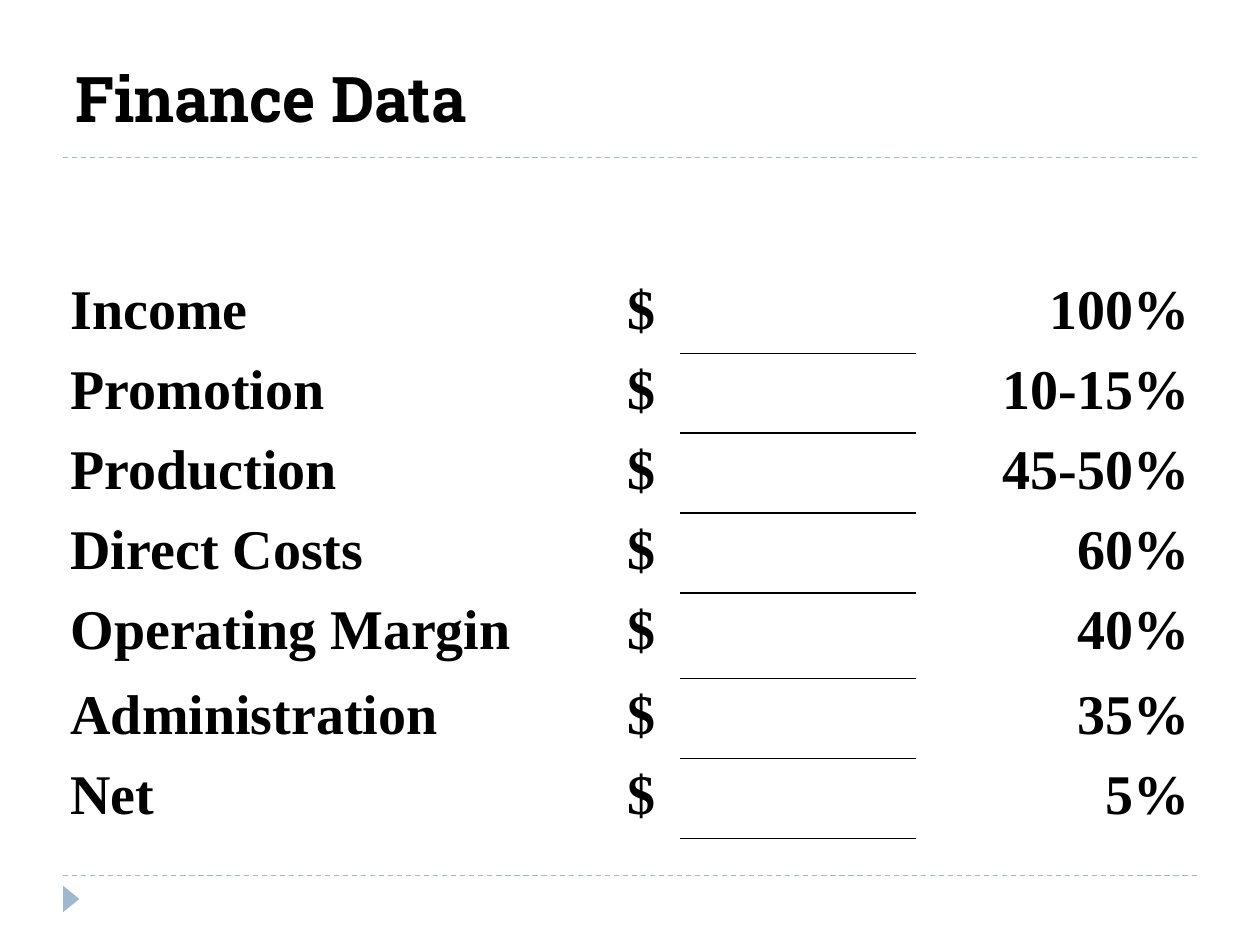
from lxml.etree import SubElement
from pptx import Presentation
from pptx.dml.color import RGBColor as RGB
from pptx.enum.dml import MSO_LINE
from pptx.enum.shapes import MSO_CONNECTOR as CONN, MSO_SHAPE as SHAPE
from pptx.enum.text import MSO_ANCHOR as ANCHOR, PP_ALIGN as ALIGN
from pptx.oxml import parse_xml
from pptx.oxml.ns import nsdecls, qn
from pptx.util import Inches, Pt

TITLE = "Finance Data"
BUDGET = [
    ("Income", "100%"),
    ("Promotion", "10-15%"),
    ("Production", "45-50%"),
    ("Direct Costs", "60%"),
    ("Operating Margin", "40%"),
    ("Administration", "35%"),
    ("Net", "5%"),
]
COL_WIDTHS = [4.32, 0.62, 1.87, 2.27]
COL_ALIGNS = [ALIGN.LEFT, ALIGN.CENTER, ALIGN.LEFT, ALIGN.RIGHT]
AMOUNT_COL = 2
ROW_HEIGHT, TALL_ROW_HEIGHT, TALL_ROW = 0.63, 0.68, "Operating Margin"
RULE_YS = [6.95, 1.25]

THEME = {
    "accent": RGB(0x9F, 0xB8, 0xCD),
    "title": {"name": "Roboto Slab", "size": Pt(36), "bold": True, "color": RGB(0, 0, 0)},
    "body": {"name": "Times New Roman", "size": Pt(32), "bold": True, "color": RGB(0, 0, 0)},
    "border": "000000",
    "plain_table": "{2D5ABB26-0587-4C30-8999-92F81FD0307C}",
}


def write(tf, text, style, align=ALIGN.LEFT):
    p = tf.paragraphs[0]
    p.alignment = align
    r = p.add_run()
    r.text = text
    for key, value in style.items():
        if key == "color":
            r.font.color.rgb = value
        else:
            setattr(r.font, key, value)


def add_rule(slide, y):
    line = slide.shapes.add_connector(CONN.STRAIGHT, Inches(0.5), Inches(y), Inches(9.5), Inches(y))
    line.line.color.rgb = THEME["accent"]
    line.line.width = Pt(0.75)
    line.line.dash_style = MSO_LINE.DASH
    SubElement(line._element.spPr, qn("a:effectLst"))


def add_marker(slide):
    sp = slide.shapes.add_shape(SHAPE.ISOSCELES_TRIANGLE, Inches(0.46), Inches(7.07), Inches(0.21), Inches(0.13))
    sp.rotation = 90
    sp.shadow.inherit = False
    sp.fill.solid()
    sp.fill.fore_color.rgb = THEME["accent"]
    sp.line.fill.background()


def add_title(slide):
    tf = slide.shapes.add_textbox(Inches(0.5), Inches(0.42), Inches(9), Inches(1.13)).text_frame
    tf.word_wrap = True
    tf.vertical_anchor = ANCHOR.TOP
    write(tf, TITLE, THEME["title"])


def set_borders(cell, sides):
    """Draw 1 pt borders on the given sides, named as in DrawingML (T, B)."""
    tc_pr = cell._tc.get_or_add_tcPr()
    for i, side in enumerate(sides):
        tc_pr.insert(i, parse_xml(
            f'<a:ln{side} {nsdecls("a")} w="{Pt(1)}"><a:solidFill>'
            f'<a:srgbClr val="{THEME["border"]}"/></a:solidFill></a:ln{side}>'))


def add_budget_table(slide):
    heights = [TALL_ROW_HEIGHT if name == TALL_ROW else ROW_HEIGHT for name, _ in BUDGET]
    table = slide.shapes.add_table(
        len(BUDGET), len(COL_WIDTHS), Inches(0.46), Inches(2.17),
        Inches(sum(COL_WIDTHS)), Inches(sum(heights))).table
    table.first_row = table.horz_banding = False
    table._tbl.tblPr.find(qn("a:tableStyleId")).text = THEME["plain_table"]
    for col, width in zip(table.columns, COL_WIDTHS):
        col.width = Inches(width)
    for r, (name, share) in enumerate(BUDGET):
        table.rows[r].height = Inches(heights[r])
        for c, text in enumerate([name, "$", "", share]):
            cell = table.cell(r, c)
            cell.fill.background()
            if c == AMOUNT_COL:
                set_borders(cell, "TB" if r else "B")
            else:
                write(cell.text_frame, text, THEME["body"], COL_ALIGNS[c])


def main():
    prs = Presentation()
    prs.slide_width, prs.slide_height = Inches(10), Inches(7.5)
    slide = prs.slides.add_slide(prs.slide_layouts[6])
    for y in RULE_YS:
        add_rule(slide, y)
    add_marker(slide)
    add_title(slide)
    add_budget_table(slide)
    prs.save("out.pptx")


if __name__ == "__main__":
    main()
